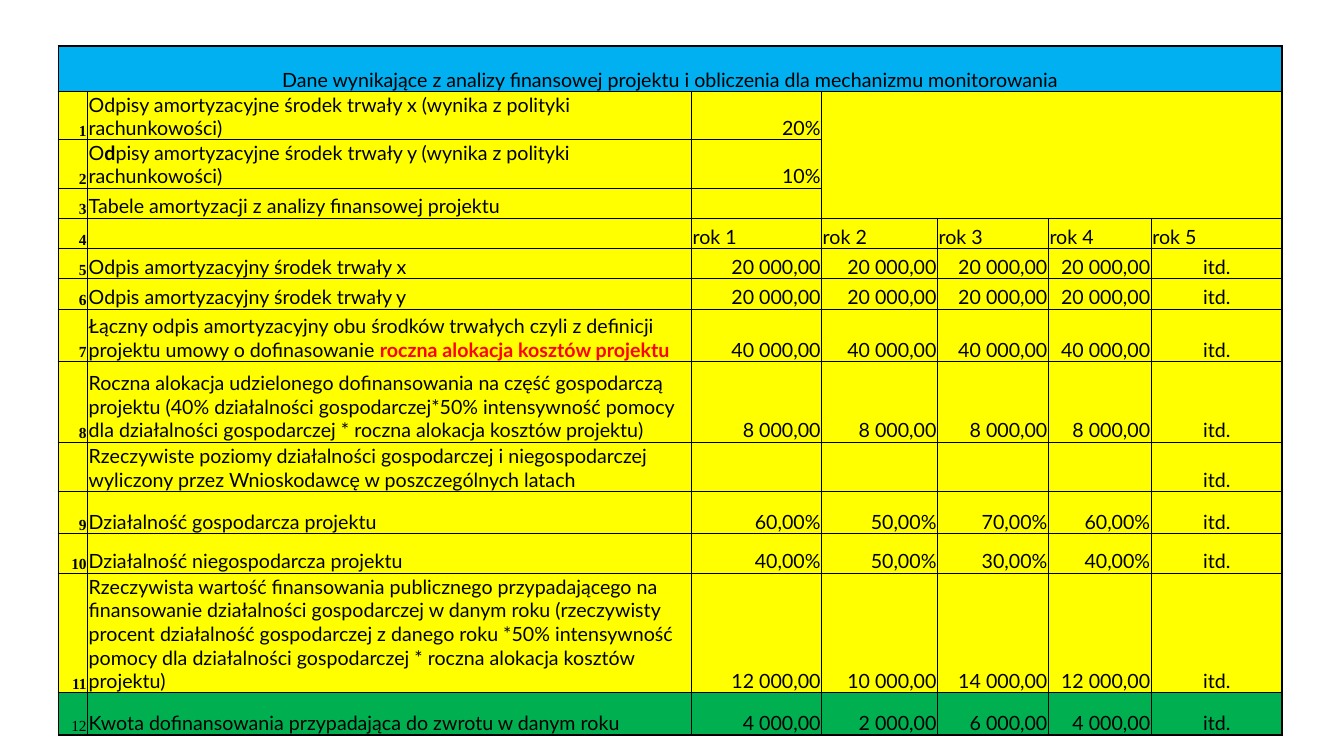
from pptx import Presentation
from pptx.dml.color import RGBColor
from pptx.enum.text import MSO_ANCHOR, PP_ALIGN
from pptx.oxml.xmlchemy import OxmlElement
from pptx.util import Inches, Pt

BLACK = RGBColor(0x00, 0x00, 0x00)
RED = RGBColor(0xFF, 0x00, 0x00)
BLUE = RGBColor(0x00, 0xB0, 0xF0)
YELLOW = RGBColor(0xFF, 0xFF, 0x00)
GREEN = RGBColor(0x00, 0xB0, 0x50)

COLUMN_WIDTHS = [0.29, 5.99, 1.29, 1.15, 1.1, 1.02, 1.3]
ROW_HEIGHTS = [0.45] + [0.3] * 6 + [0.52, 0.8, 0.49, 0.42, 0.39, 1.19, 0.42]
TITLE = "Dane wynikające z analizy finansowej projektu i obliczenia dla mechanizmu monitorowania"
RED_TERM = "roczna alokacja kosztów projektu"

# Number, label (as spans, every second one bold) and yearly values
ROWS = [
    ("1", ["Odpisy amortyzacyjne środek trwały x (wynika z polityki rachunkowości)"], ["20%"]),
    ("2", ["O", "d", "pisy amortyzacyjne środek trwały y (wynika z polityki rachunkowości)"], ["10%"]),
    ("3", ["Tabele amortyzacji z analizy finansowej projektu"], []),
    ("4", [""], [f"rok {year}" for year in range(1, 6)]),
    ("5", ["Odpis amortyzacyjny środek trwały x"], ["20 000,00"] * 4 + ["itd."]),
    ("6", ["Odpis amortyzacyjny środek trwały y"], ["20 000,00"] * 4 + ["itd."]),
    ("7", ["Łączny odpis amortyzacyjny obu środków trwałych czyli z definicji "
           "projektu umowy o dofinasowanie ", RED_TERM], ["40 000,00"] * 4 + ["itd."]),
    ("8", ["Roczna alokacja udzielonego dofinansowania na część gospodarczą projektu "
           "(40% działalności gospodarczej*50% intensywność pomocy dla działalności "
           "gospodarczej * roczna alokacja kosztów projektu)"], ["8 000,00"] * 4 + ["itd."]),
    ("", ["Rzeczywiste poziomy działalności gospodarczej i niegospodarczej wyliczony "
          "przez Wnioskodawcę w poszczególnych latach"], [""] * 4 + ["itd."]),
    ("9", ["Działalność gospodarcza projektu"],
     ["60,00%", "50,00%", "70,00%", "60,00%", "itd."]),
    ("10", ["Działalność niegospodarcza projektu"],
     ["40,00%", "50,00%", "30,00%", "40,00%", "itd."]),
    ("11", ["Rzeczywista wartość finansowania publicznego przypadającego na finansowanie "
            "działalności gospodarczej w danym roku (rzeczywisty procent działalność "
            "gospodarczej z danego roku *50% intensywność pomocy dla działalności "
            "gospodarczej * roczna alokacja kosztów projektu)"],
     ["12 000,00", "10 000,00", "14 000,00", "12 000,00", "itd."]),
    ("12", ["Kwota dofinansowania przypadająca do zwrotu w danym roku"],
     ["4 000,00", "2 000,00", "6 000,00", "4 000,00", "itd."]),
]
LAST_ROW = len(ROW_HEIGHTS) - 1
LAST_COLUMN = len(COLUMN_WIDTHS) - 1


def fill_cell(cell, spans, align, fill, font_name="Lato", size=14, all_bold=False):
    cell.fill.solid()
    cell.fill.fore_color.rgb = fill
    cell.vertical_anchor = MSO_ANCHOR.BOTTOM
    cell.margin_left = cell.margin_top = cell.margin_right = Inches(0.01)
    cell.margin_bottom = 0
    para = cell.text_frame.paragraphs[0]
    para.alignment = align
    for index, words in enumerate(spans):
        if words:
            span = para.add_run()
            span.text = words
            span.font.name = font_name
            span.font.size = Pt(size)
            span.font.bold = all_bold or index % 2 == 1
            span.font.color.rgb = RED if words == RED_TERM else BLACK
    # Keep empty cells from stretching their row
    if not para.runs:
        end = OxmlElement("a:endParaRPr")
        end.set("sz", str(size * 100))
        para._p.append(end)


def set_borders(cell, widths):
    properties = cell._tc.get_or_add_tcPr()
    for index, (side, width) in enumerate(zip(("lnL", "lnR", "lnT", "lnB"), widths)):
        line = OxmlElement(f"a:{side}")
        line.set("w", str(Pt(width)))
        if width:
            paint = OxmlElement("a:solidFill")
            color = OxmlElement("a:srgbClr")
            color.set("val", str(BLACK))
            paint.append(color)
        else:
            paint = OxmlElement("a:noFill")
        line.append(paint)
        properties.insert(index, line)


deck = Presentation()
deck.slide_width, deck.slide_height = Inches(13.33), Inches(7.5)
page = deck.slides.add_slide(deck.slide_layouts[6])

# Table grid
frame = page.shapes.add_table(len(ROW_HEIGHTS), len(COLUMN_WIDTHS),
                              Inches(0.58), Inches(0.46), Inches(12.14), Inches(6.83))
table = frame.table
table.first_row = table.horz_banding = False
for column, width in zip(table.columns, COLUMN_WIDTHS):
    column.width = Inches(width)
for row, height in zip(table.rows, ROW_HEIGHTS):
    row.height = Inches(height)
frame.height = Inches(6.83)

# Title row
title = table.cell(0, 0)
title.merge(table.cell(0, LAST_COLUMN))
fill_cell(title, [TITLE], PP_ALIGN.CENTER, BLUE)
set_borders(title, (1.5, 1.5, 1.5, 0.5))

# Numbered rows
for r, (number, label, values) in enumerate(ROWS, start=1):
    fill = GREEN if r == LAST_ROW else YELLOW
    fill_cell(table.cell(r, 0), [number], PP_ALIGN.RIGHT, fill,
              "Times New Roman", 11, all_bold=r < LAST_ROW)
    fill_cell(table.cell(r, 1), label, PP_ALIGN.LEFT, fill)
    for c in range(2, LAST_COLUMN + 1):
        value = values[c - 2] if c - 2 < len(values) else ""
        align = PP_ALIGN.RIGHT
        if value.startswith("rok"):
            align = PP_ALIGN.LEFT
        elif value == "itd.":
            align = PP_ALIGN.CENTER
        fill_cell(table.cell(r, c), [value], align, fill)

    # Thick frame, thin grid, and an open area at the top right
    for c in range(LAST_COLUMN + 1):
        is_open = r <= 3 and c >= 3
        inner = 0 if is_open else 0.5
        left = 1.5 if c == 0 else 0.5 if c == 3 else inner
        right = 1.5 if c == LAST_COLUMN else inner
        bottom = 1.5 if r == LAST_ROW else 0.5 if r == 3 else inner
        set_borders(table.cell(r, c), (left, right, inner, bottom))

deck.save("out.pptx")
